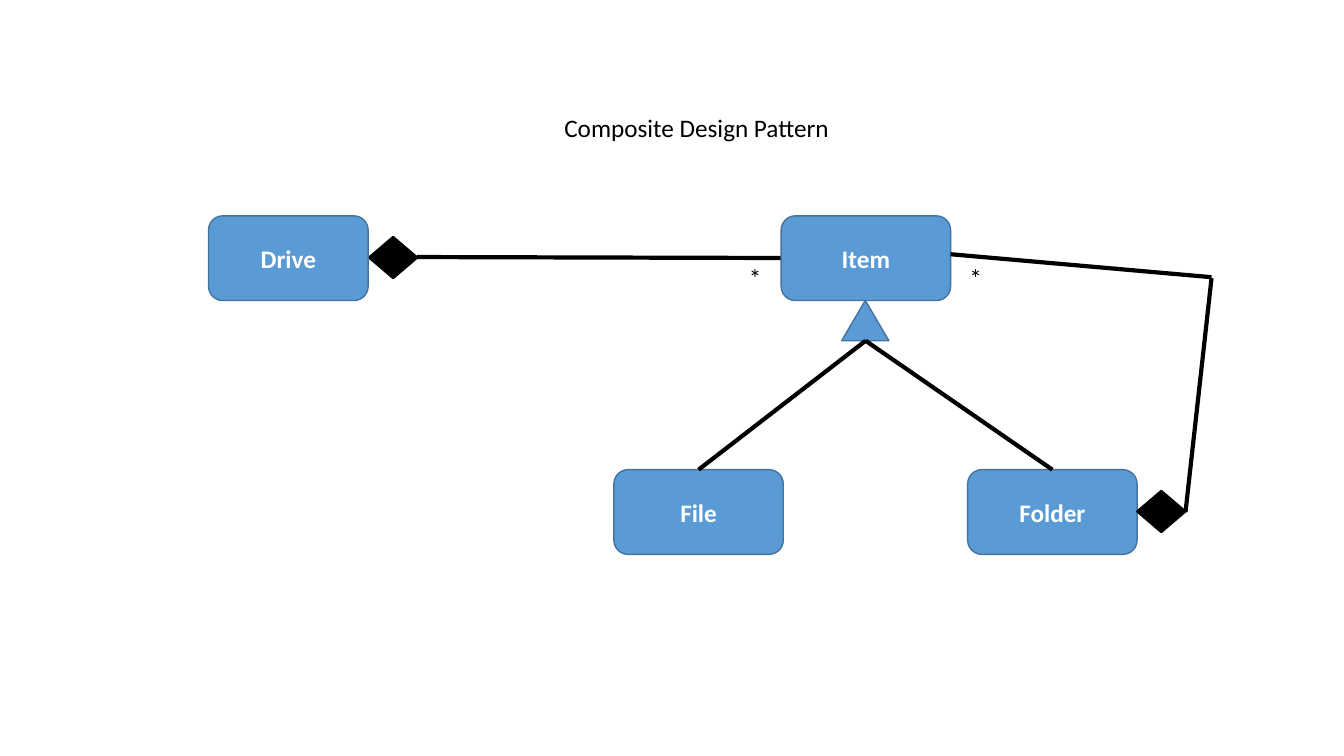
from lxml.etree import SubElement
from pptx import Presentation
from pptx.dml.color import RGBColor as RGB
from pptx.enum.shapes import MSO_CONNECTOR as CONN, MSO_SHAPE as SHAPE
from pptx.enum.text import MSO_ANCHOR as ANCHOR, MSO_AUTO_SIZE as AUTO, PP_ALIGN as ALIGN
from pptx.oxml.ns import qn
from pptx.util import Pt

COLORS = {"blue": "5B9BD5", "edge": "43739E", "black": "000000", "white": "FFFFFF"}


class Diagram:
    """Draws class diagram elements on one slide, with lengths in points."""

    font = "Calibri"
    size = 18
    box_height = 60.5

    def __init__(self, slide):
        self.shapes = slide.shapes

    def color(self, name):
        return RGB.from_string(COLORS[name])

    def set_text(self, sp, text, color, bold=False):
        p = sp.text_frame.paragraphs[0]
        p.text = text
        p.font.name = self.font
        p.font.size = Pt(self.size)
        p.font.bold = bold
        p.font.color.rgb = self.color(color)
        return p

    def shape(self, kind, x, y, w, h, fill="blue", line="edge", weight=1):
        sp = self.shapes.add_shape(kind, Pt(x), Pt(y), Pt(w), Pt(h))
        sp.shadow.inherit = False
        sp.fill.solid()
        sp.fill.fore_color.rgb = self.color(fill)
        sp.line.color.rgb = self.color(line)
        sp.line.width = Pt(weight)
        return sp

    def class_box(self, name, x, y, w=121):
        sp = self.shape(SHAPE.ROUNDED_RECTANGLE, x, y, w, self.box_height)
        sp.text_frame.vertical_anchor = ANCHOR.MIDDLE
        self.set_text(sp, name, "white", bold=True).alignment = ALIGN.CENTER

    def diamond(self, x, y):
        self.shape(SHAPE.DIAMOND, x, y, 34.6, 29.5, "black", "black", 1.5)

    def triangle(self, x, y):
        self.shape(SHAPE.ISOSCELES_TRIANGLE, x, y, 33.8, 28.8)

    def label(self, text, x, y, w):
        sp = self.shapes.add_textbox(Pt(x), Pt(y), Pt(w), Pt(29))
        sp.text_frame.word_wrap = False
        sp.text_frame.auto_size = AUTO.SHAPE_TO_FIT_TEXT
        self.set_text(sp, text, "black")

    def line(self, x1, y1, x2, y2):
        cx = self.shapes.add_connector(CONN.STRAIGHT, Pt(x1), Pt(y1), Pt(x2), Pt(y2))
        cx.line.color.rgb = self.color("black")
        cx.line.width = Pt(3)
        SubElement(cx._element.spPr, qn("a:effectLst"))


def main():
    prs = Presentation()
    prs.slide_width, prs.slide_height = Pt(960), Pt(540)
    s = Diagram(prs.slides.add_slide(prs.slide_layouts[6]))

    top, bottom = 154.2, 335.5
    s.diamond(263.5, 169.2)
    s.triangle(601.2, 214.6)
    s.class_box("Drive", 149, top, 114)
    s.line(298, 183.6, 558, 184.3)
    s.class_box("File", 438.5, bottom)
    s.label("Composite Design Pattern", 396, 77, 206)
    s.class_box("Folder", 691.2, bottom)
    s.class_box("Item", 558, top)
    for x in (527.8, 685.4):
        s.label("*", x, 183.6, 23.8)
    for x in (499, 751.7):
        s.line(x, bottom, 618.3, 243.4)
    s.diamond(812.2, 350.6)
    s.line(865.4, 198, 679, 181.6)
    s.line(865.4, 198.7, 846.8, 365.8)

    prs.save("out.pptx")


if __name__ == "__main__":
    main()
